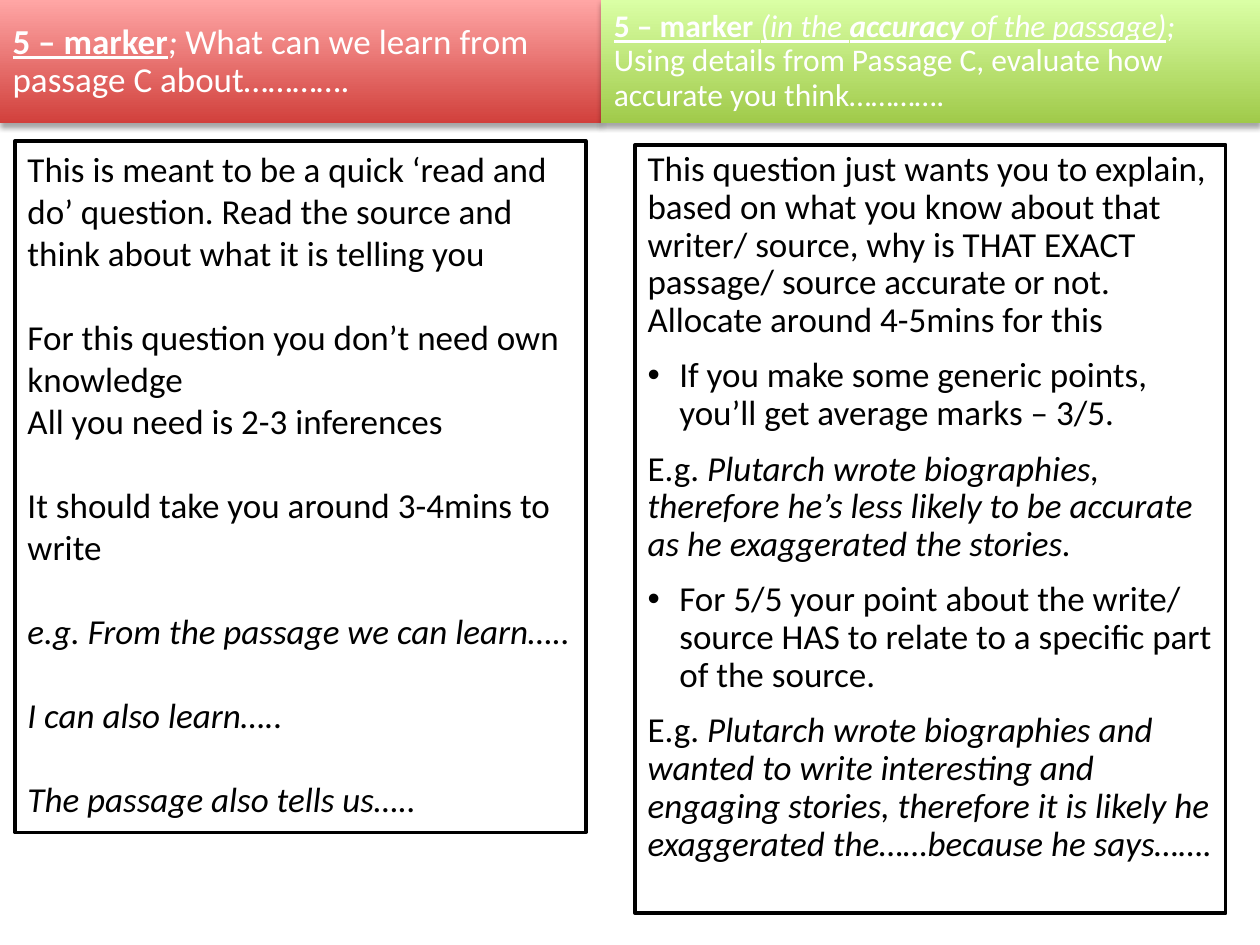
from lxml.etree import SubElement
from pptx import Presentation
from pptx.dml.color import RGBColor
from pptx.enum.text import MSO_ANCHOR as Anchor, MSO_AUTO_SIZE as AutoSize, PP_ALIGN as Align
from pptx.oxml.ns import qn
from pptx.util import Cm, Pt

BLACK = RGBColor(0x00, 0x00, 0x00)
WHITE = RGBColor(0xFF, 0xFF, 0xFF)
RED = RGBColor(0xD1, 0x40, 0x3C)
PINK = RGBColor(0xFF, 0xA6, 0xA5)
GREEN = RGBColor(0xA0, 0xCA, 0x4A)
LIME = RGBColor(0xDA, 0xFF, 0xA5)

SLIDE_WIDTH, SLIDE_HEIGHT = 25.4, 19.05
SPLIT, HEADER_HEIGHT = 12.12, 2.49
COMPARISON_LAYOUT = 4
BULLET_INDENT = Cm(0.64)
GAP = 24

LEARN_HEADER = [(0, False, [
    ("5 – marker", "bu"), ("; ", "i"),
    ("What can we learn from passage C about………….", "")])]
ACCURACY_HEADER = [(0, False, [
    ("5 – marker ", "bu"), ("(in the ", "iu"), ("accuracy", "biu"),
    (" of the passage)", "iu"), ("; ", "i"),
    ("Using details from Passage C, evaluate how accurate you think………….", "")])]
LEARN_ADVICE = [
    (0, False, [("This is meant to be a quick ‘read and do’ question. Read the source "
                 "and think about what it is telling you", "")]),
    (GAP, False, [("For this question you don’t need own knowledge", "")]),
    (0, False, [("All you need is 2-3 inferences", "")]),
    (GAP, False, [("It should take you around 3-4mins to write", "")]),
    (GAP, False, [("e.g. From the passage we can learn…..", "i")]),
    (GAP, False, [("I can also learn…..", "i")]),
    (GAP, False, [("The passage also tells us…..", "i")]),
]
ACCURACY_ADVICE = [(10, bulleted, runs) for bulleted, runs in [
    (False, [("This question just wants you to explain, based on what you know about that "
              "writer/ source, why is THAT EXACT passage/ source accurate or not. "
              "Allocate around 4-5mins for this", "")]),
    (True, [("If you make some generic points, you’ll get average marks – 3/5.", "")]),
    (False, [("E.g. ", ""),
             ("Plutarch wrote biographies, therefore he’s less likely to be accurate "
              "as he exaggerated the stories.", "i")]),
    (True, [("For 5/5 your point about the write/ source HAS to relate to a specific "
             "part of the source.", "")]),
    (False, [("E.g. ", ""),
             ("Plutarch wrote biographies and wanted to write interesting and engaging "
              "stories, therefore it is likely he exaggerated the……because he says…….", "i")]),
]]

HEADERS = [
    (0, (0, 0, SPLIT, HEADER_HEIGHT), (RED, PINK), 20, LEARN_HEADER),
    (3, (SPLIT, 0, SLIDE_WIDTH - SPLIT, HEADER_HEIGHT), (GREEN, LIME), 18, ACCURACY_HEADER),
]
ADVICE = [
    (2, (0.3, 2.84, 11.51, 13.94), 1.0, LEARN_ADVICE),
    (4, (12.8, 2.92, 11.91, 15.49), 0.9, ACCURACY_ADVICE),
]


def apply(target, formats):
    for attribute, value in formats.items():
        setattr(target, attribute, value)


def place(panel, box):
    apply(panel, dict(zip(("left", "top", "width", "height"), map(Cm, box))))


def set_bullet(paragraph, bulleted):
    properties = paragraph._p.get_or_add_pPr()
    indent = BULLET_INDENT if bulleted else 0
    properties.set("marL", str(indent))
    properties.set("indent", str(-indent))
    if bulleted:
        SubElement(properties, qn("a:buFont"), typeface="Arial")
        SubElement(properties, qn("a:buChar"), char="•")
    else:
        SubElement(properties, qn("a:buNone"))


def write(panel, content, size, color, spacing, anchor):
    frame = panel.text_frame
    apply(frame, {"word_wrap": True, "auto_size": AutoSize.NONE, "vertical_anchor": anchor})
    for number, (space_before, bulleted, runs) in enumerate(content):
        paragraph = frame.add_paragraph() if number else frame.paragraphs[0]
        apply(paragraph, {"alignment": Align.LEFT, "line_spacing": spacing,
                          "space_before": Pt(space_before), "space_after": Pt(0)})
        set_bullet(paragraph, bulleted)
        for text, style in runs:
            run = paragraph.add_run()
            run.text = text
            apply(run.font, {"name": "Calibri", "size": Pt(size), "bold": "b" in style,
                             "italic": "i" in style, "underline": "u" in style})
            run.font.color.rgb = color


def add_shadow(panel):
    effects = SubElement(panel._element.spPr, qn("a:effectLst"))
    shadow = SubElement(effects, qn("a:outerShdw"), blurRad=str(Pt(3.1)), dist=str(Pt(1.8)),
                        dir="5400000", rotWithShape="0")
    black = SubElement(shadow, qn("a:srgbClr"), val=str(BLACK))
    SubElement(black, qn("a:alpha"), val="35000")


def main():
    deck = Presentation()
    apply(deck, {"slide_width": Cm(SLIDE_WIDTH), "slide_height": Cm(SLIDE_HEIGHT)})
    slide = deck.slides.add_slide(deck.slide_layouts[COMPARISON_LAYOUT])
    panels = {panel.placeholder_format.idx: panel for panel in slide.placeholders}

    for idx, box, shades, size, content in HEADERS:
        header = panels.pop(idx)
        place(header, box)
        header.fill.gradient()
        header.fill.gradient_angle = 90
        for stop, shade in zip(header.fill.gradient_stops, shades):
            stop.color.rgb = shade
        add_shadow(header)
        write(header, content, size, WHITE, 0.9, Anchor.MIDDLE)

    for idx, box, spacing, content in ADVICE:
        advice = panels.pop(idx)
        place(advice, box)
        advice.fill.solid()
        advice.fill.fore_color.rgb = WHITE
        advice.line.color.rgb = BLACK
        advice.line.width = Pt(2)
        write(advice, content, 20, BLACK, spacing, Anchor.TOP)

    for unused in panels.values():
        unused._element.getparent().remove(unused._element)
    deck.save("out.pptx")


if __name__ == "__main__":
    main()
